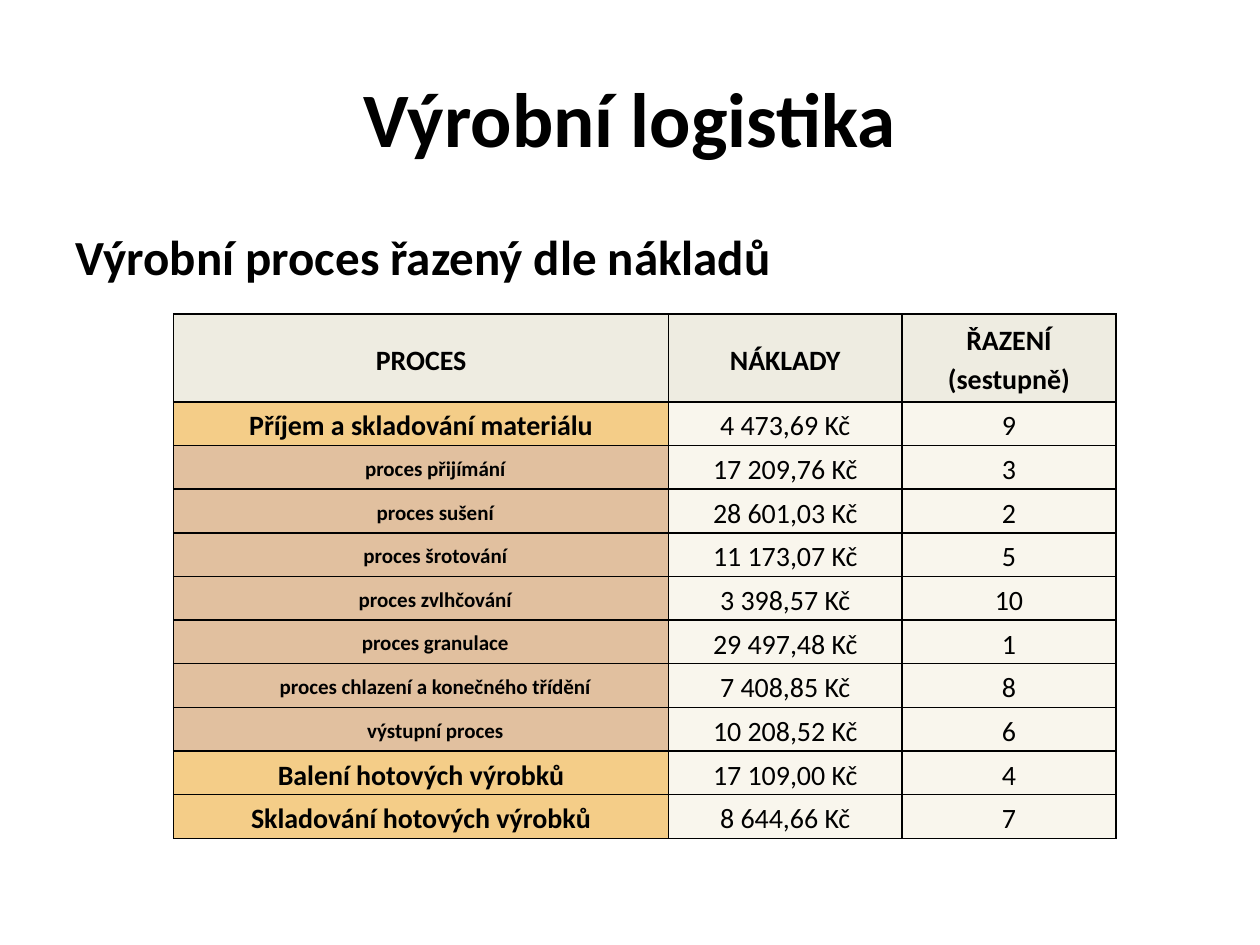
from copy import deepcopy
from dataclasses import dataclass

from lxml.etree import SubElement
from pptx import Presentation
from pptx.dml.color import RGBColor as Rgb
from pptx.enum.text import MSO_ANCHOR as Anchor, PP_ALIGN as Align
from pptx.oxml.ns import qn
from pptx.util import Cm, Pt


@dataclass(frozen=True)
class Theme:
    font: str = "Calibri"
    ink: str = "000000"
    header_fill: str = "EEECE1"
    stage_fill: str = "F4CD88"
    step_fill: str = "E1C09F"
    value_fill: str = "F9F6ED"
    title_size: int = 44
    subtitle_size: int = 28
    table_size: int = 16
    step_size: int = 12
    border: int = 1


THEME = Theme()
HEADINGS = ("PROCES", "NÁKLADY", "ŘAZENÍ\v(sestupně)")
STAGES = {
    "Příjem a skladování materiálu",
    "Balení hotových výrobků",
    "Skladování hotových výrobků",
}
COSTS = [
    ("Příjem a skladování materiálu", "4 473,69 Kč", "9"),
    ("proces přijímání", "17 209,76 Kč", "3"),
    ("proces sušení", "28 601,03 Kč", "2"),
    ("proces šrotování", "11 173,07 Kč", "5"),
    ("proces zvlhčování", "3 398,57 Kč", "10"),
    ("proces granulace", "29 497,48 Kč", "1"),
    ("proces chlazení a konečného třídění", "7 408,85 Kč", "8"),
    ("výstupní proces", "10 208,52 Kč", "6"),
    ("Balení hotových výrobků", "17 109,00 Kč", "4"),
    ("Skladování hotových výrobků", "8 644,66 Kč", "7"),
]
COLUMN_WIDTHS = (9.98, 4.7, 4.32)
HEADER_HEIGHT, ROW_HEIGHT = 1.77, 0.88
INSET, STEP_INDENT = 0.13, 0.57


def write(frame, text, size, bold=True, align=Align.CENTER, spacing=None):
    paragraph = frame.paragraphs[0]
    paragraph.text = text
    paragraph.alignment = align
    if spacing:
        paragraph.line_spacing = spacing
    for run in paragraph.runs:
        run.font.name = THEME.font
        run.font.size = Pt(size)
        run.font.bold = bold
        run.font.color.rgb = Rgb.from_string(THEME.ink)
    for line_break in paragraph._p.findall(qn("a:br")):
        line_break.append(deepcopy(paragraph.runs[0]._r.rPr))


def add_heading(slide, text, top, height, anchor, **text_format):
    heading = slide.shapes.add_textbox(Cm(1.27), Cm(top), Cm(22.86), Cm(height))
    frame = heading.text_frame
    frame.word_wrap = True
    frame.vertical_anchor = anchor
    write(frame, text, **text_format)


def add_borders(cell):
    properties = cell._tc.get_or_add_tcPr()
    for position, side in enumerate(("lnL", "lnR", "lnT", "lnB")):
        line = SubElement(properties, qn(f"a:{side}"), w=str(Pt(THEME.border)))
        solid = SubElement(line, qn("a:solidFill"))
        SubElement(solid, qn("a:srgbClr"), val=THEME.ink)
        properties.insert(position, line)


def fill_cell(cell, text, fill, indent=0, size=THEME.table_size, bold=True):
    cell.fill.solid()
    cell.fill.fore_color.rgb = Rgb.from_string(fill)
    cell.vertical_anchor = Anchor.MIDDLE
    cell.margin_left, cell.margin_right = Cm(INSET + indent), Cm(INSET)
    cell.margin_top = cell.margin_bottom = 0
    write(cell.text_frame, text, size, bold, spacing=1.15)
    add_borders(cell)


def add_cost_table(slide):
    row_count = len(COSTS) + 1
    height = HEADER_HEIGHT + ROW_HEIGHT * len(COSTS)
    table = slide.shapes.add_table(
        row_count, len(HEADINGS), Cm(3.5), Cm(6.33), Cm(sum(COLUMN_WIDTHS)), Cm(height)
    ).table
    for column, width in zip(table.columns, COLUMN_WIDTHS):
        column.width = Cm(width)
    for row in table.rows:
        row.height = Cm(ROW_HEIGHT)
    table.rows[0].height = Cm(HEADER_HEIGHT)

    for column, heading in enumerate(HEADINGS):
        fill_cell(table.cell(0, column), heading, THEME.header_fill)
    for row, (process, *values) in enumerate(COSTS, start=1):
        if process in STAGES:
            fill_cell(table.cell(row, 0), process, THEME.stage_fill)
        else:
            fill_cell(table.cell(row, 0), process, THEME.step_fill,
                      indent=STEP_INDENT, size=THEME.step_size)
        for column, value in enumerate(values, start=1):
            fill_cell(table.cell(row, column), value, THEME.value_fill, bold=False)


def main():
    deck = Presentation()
    deck.slide_width, deck.slide_height = Cm(25.4), Cm(19.05)
    slide = deck.slides.add_slide(deck.slide_layouts[6])
    add_heading(slide, "Výrobní logistika", 0.76, 3.18, Anchor.MIDDLE,
                size=THEME.title_size)
    add_heading(slide, "Výrobní proces řazený dle nákladů", 4.45, 12.57, Anchor.TOP,
                size=THEME.subtitle_size, align=Align.LEFT)
    add_cost_table(slide)
    deck.save("out.pptx")


if __name__ == "__main__":
    main()
